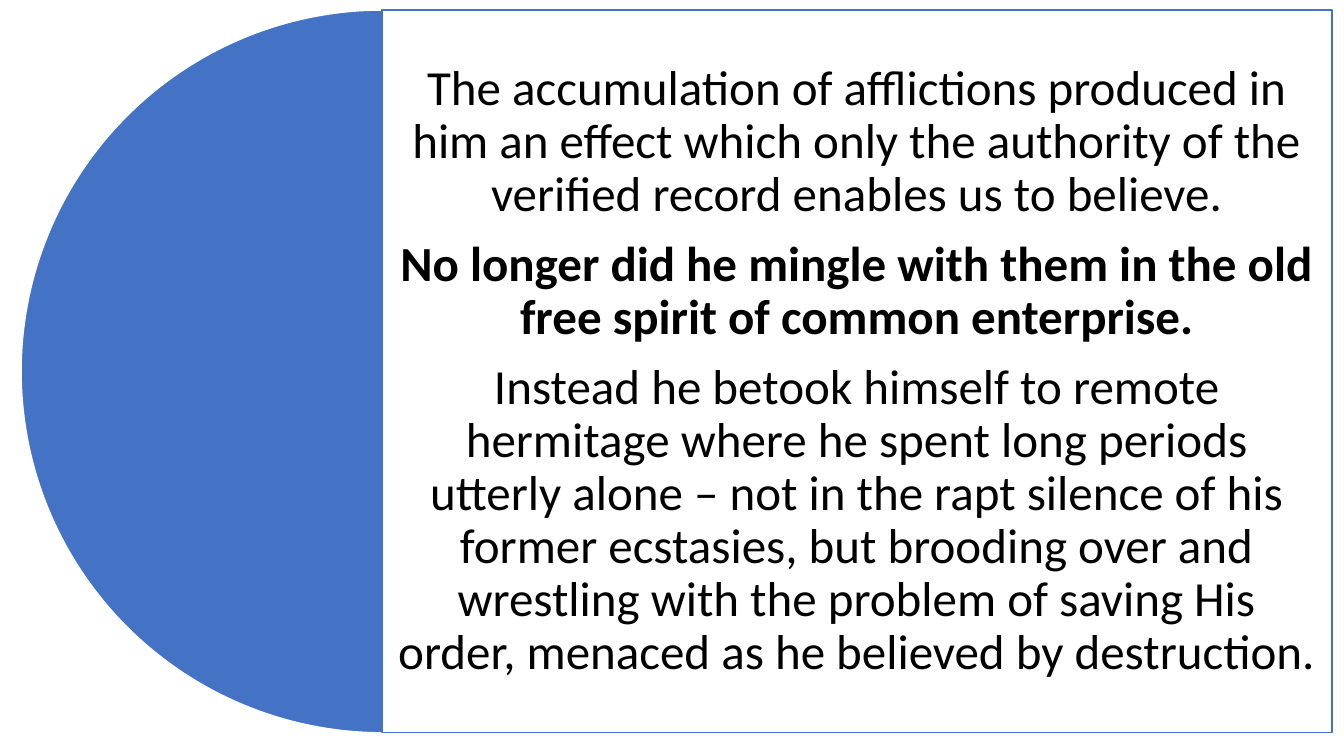
"""Builds a slide with a half disc beside a framed text panel."""
from lxml import etree
from pptx import Presentation
from pptx.dml.color import RGBColor
from pptx.enum.shapes import MSO_SHAPE
from pptx.enum.text import MSO_ANCHOR, PP_ALIGN
from pptx.oxml.ns import qn
from pptx.util import Inches, Pt

PIE = MSO_SHAPE.PIE
RECTANGLE = MSO_SHAPE.RECTANGLE
MIDDLE = MSO_ANCHOR.MIDDLE
CENTER = PP_ALIGN.CENTER

BLUE = "4472C4"
WHITE = "FFFFFF"
BLACK = "000000"
TOP = 0.1
DIAMETER = 7.17
PASSAGES = [
    ("The accumulation of afflictions produced in him an effect which only "
     "the authority of the verified record enables us to believe.", False),
    ("No longer did he mingle with them in the old free spirit of common "
     "enterprise.", True),
    ("Instead he betook himself to remote hermitage where he spent long "
     "periods utterly alone – not in the rapt silence of his former "
     "ecstasies, but brooding over and wrestling with the problem of saving "
     "His order, menaced as he believed by destruction.", False),
]


def color(value):
    return RGBColor.from_string(value)


def add_block(slide, kind, left, width, fill, line):
    shape = slide.shapes.add_shape(
        kind, Inches(left), Inches(TOP), Inches(width), Inches(DIAMETER))
    shape.shadow.inherit = False
    shape.fill.solid()
    shape.fill.fore_color.rgb = color(fill)
    shape.line.color.rgb = color(line)
    shape.line.width = Pt(1)
    return shape


presentation = Presentation()
presentation.slide_width = Inches(13.33)
presentation.slide_height = Inches(7.5)
slide = presentation.slides.add_slide(presentation.slide_layouts[6])

half_disc = add_block(slide, PIE, 0.21, DIAMETER, BLUE, WHITE)
half_disc.adjustments[0] = 54
half_disc.adjustments[1] = 162

panel = add_block(slide, RECTANGLE, 3.79, 9.42, WHITE, BLUE)
panel_color = panel.fill._xPr.find(qn("a:solidFill"))[0]
etree.SubElement(panel_color, qn("a:alpha"), val="90000")

text_frame = panel.text_frame
text_frame.word_wrap = True
text_frame.vertical_anchor = MIDDLE
text_frame.margin_left = text_frame.margin_right = Inches(0.15)
text_frame.margin_top = text_frame.margin_bottom = Inches(0.15)
text_frame.text = "\n".join(passage for passage, bold in PASSAGES)

for paragraph, (passage, bold) in zip(text_frame.paragraphs, PASSAGES):
    paragraph.alignment = CENTER
    paragraph.line_spacing = 0.9
    paragraph.space_after = Pt(12.25)
    font = paragraph.runs[0].font
    font.name = "Calibri"
    font.size = Pt(35)
    font.bold = bold
    font.color.rgb = color(BLACK)

presentation.save("out.pptx")
